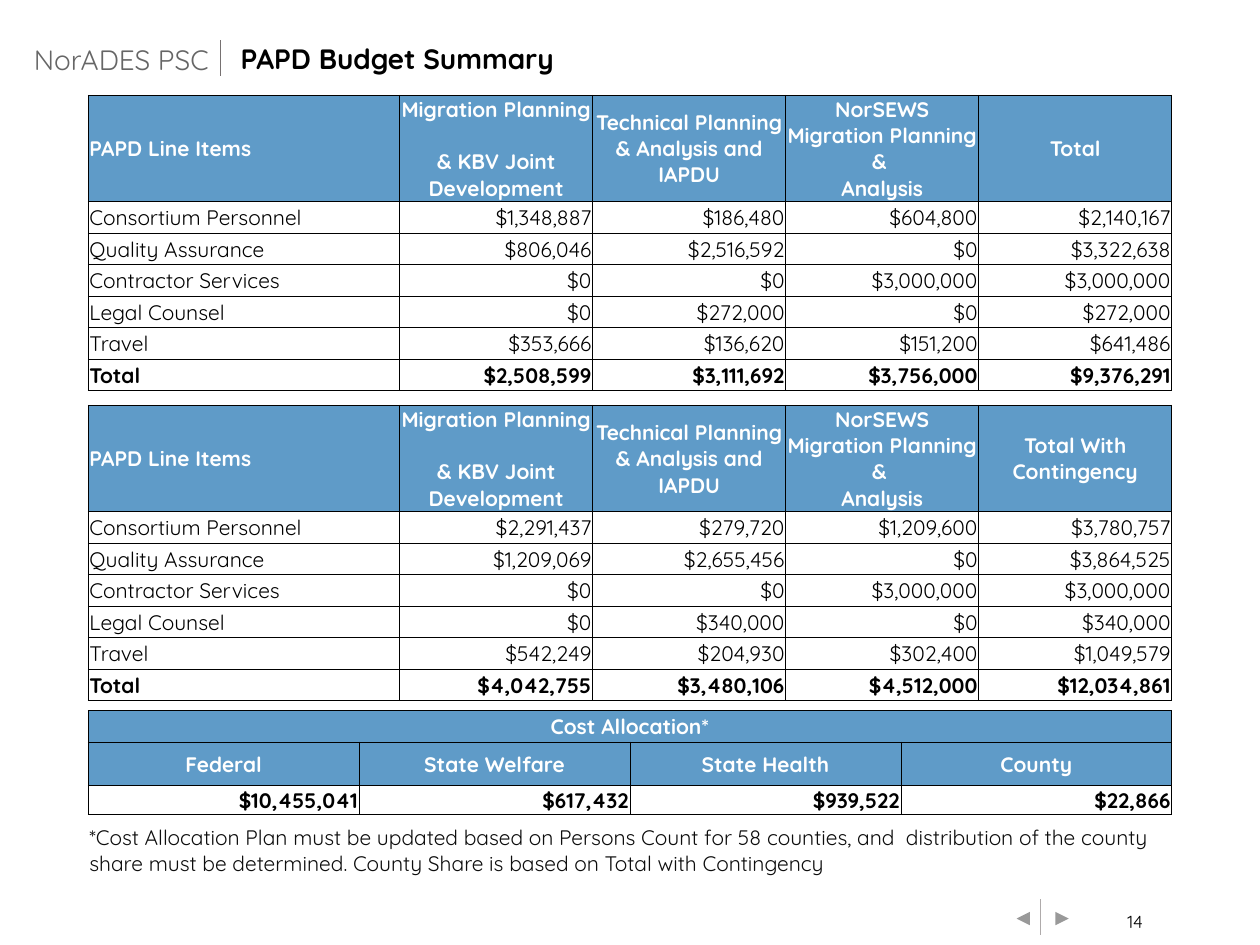
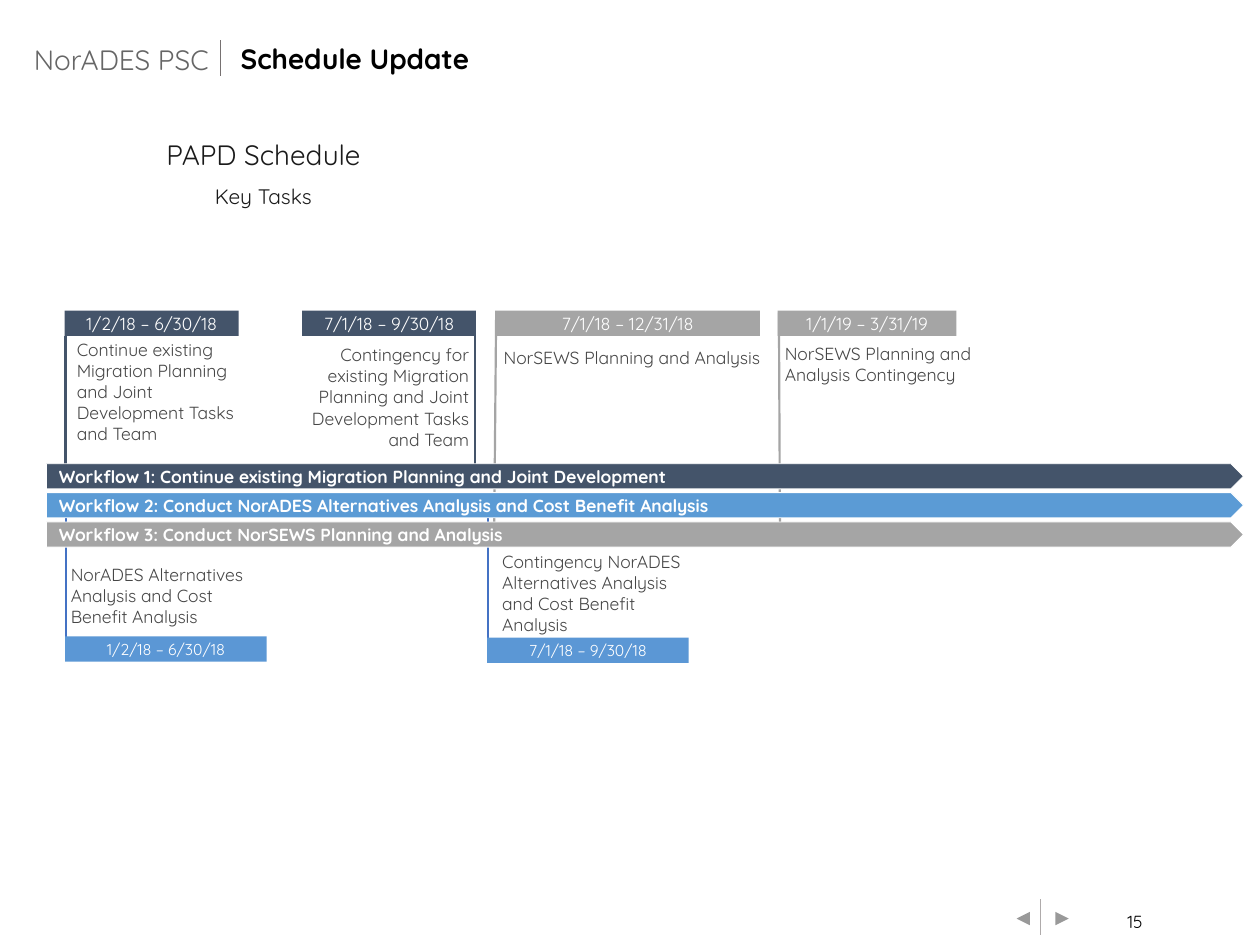
"""Build the budget summary and schedule update slides."""
import copy
from dataclasses import dataclass
from typing import Any, Optional

import lxml.etree
import pptx
import pptx.dml.color
import pptx.enum.shapes
import pptx.enum.text
import pptx.oxml.ns
import pptx.util

Pt = pptx.util.Pt
qn = pptx.oxml.ns.qn
Shape = pptx.enum.shapes.MSO_SHAPE
Align = pptx.enum.text.PP_ALIGN
Anchor = pptx.enum.text.MSO_ANCHOR

FONT = "Quicksand"
WHITE, BLACK, GREY, NAVY = "FFFFFF", "000000", "A5A5A5", "44546A"
HEADER_BLUE, FLOW_BLUE, DATE_BLUE, STEM_BLUE = "5F9BC8", "5B9BD5", "5B97D5", "4472C4"
TASK_GREY = "464646"
BAND_HEIGHT = 14.4
NO_INSETS = (0, 0, 0, 0)
BOX_INSETS = (7.2, 3.6, 7.2, 3.6)
TITLE_INSETS = (0, 3.6, 0, 3.6)


@dataclass
class Area:
    """Left, top, width and height in points."""
    left: float
    top: float
    width: float
    height: float

    def lengths(self) -> tuple:
        """Return the four values as lengths."""
        return Pt(self.left), Pt(self.top), Pt(self.width), Pt(self.height)


@dataclass
class Line:
    """A straight line between two points."""
    x1: float
    y1: float
    x2: float
    y2: float
    color: str
    weight: float = 1.25


@dataclass
class Workflow:
    """A full-width arrow bar."""
    top: float
    color: str
    text: str


@dataclass
class Phase:
    """A dated band with its stem and task description."""
    band: Area
    color: str
    dates: str
    stem: Line
    task_area: Area
    task: str
    date_size: float = 10
    align: Any = Align.LEFT
    anchor: Any = Anchor.TOP


@dataclass
class Cell:
    """Text and look of one table cell."""
    text: str = ""
    align: Any = Align.LEFT
    color: str = BLACK
    bold: bool = False
    fill: Optional[str] = None
    borders: str = "LRTB"


WORKFLOWS = [
    Workflow(265, NAVY, "Workflow 1: Continue existing Migration Planning and Joint Development"),
    Workflow(281.5, FLOW_BLUE, "Workflow 2: Conduct NorADES Alternatives Analysis and Cost Benefit Analysis"),
    Workflow(298.3, GREY, "Workflow 3: Conduct NorSEWS Planning and Analysis"),
]

PHASES = [
    Phase(Area(36.9, 177.6, 99.4, BAND_HEIGHT), NAVY, "1/2/18 – 6/30/18",
          Line(37.5, 192, 37.5, 268, NAVY), Area(43.9, 193.7, 103, 58.3),
          "Continue existing Migration Planning and Joint Development Tasks and Team"),
    Phase(Area(172.6, 177.6, 99.4, BAND_HEIGHT), NAVY, "7/1/18 – 9/30/18",
          Line(271.4, 185, 271.4, 271, NAVY), Area(165.6, 196.8, 102.4, 46.8),
          "Contingency for existing Migration Planning and Joint Development Tasks and Team",
          align=Align.RIGHT),
    Phase(Area(283, 177.6, 151.2, BAND_HEIGHT), GREY, "7/1/18 – 12/31/18",
          Line(283.5, 181.4, 282.4, 303.8, GREY), Area(287.8, 198, 151.2, 39.6),
          "NorSEWS Planning and Analysis"),
    Phase(Area(444.4, 177.6, 102.2, BAND_HEIGHT), GREY, "1/1/19 – 3/31/19",
          Line(445.1, 178.6, 445.7, 301, GREY), Area(448.5, 195.8, 120.2, 51.8),
          "NorSEWS Planning and Analysis Contingency"),
    Phase(Area(37.2, 363.7, 115.2, BAND_HEIGHT), DATE_BLUE, "1/2/18 – 6/30/18",
          Line(37.8, 290.2, 37.8, 376.6, STEM_BLUE), Area(40.5, 320.6, 110.2, 39.6),
          "NorADES Alternatives Analysis and Cost Benefit Analysis", 9, anchor=Anchor.MIDDLE),
    Phase(Area(278.4, 364.4, 115.2, BAND_HEIGHT), DATE_BLUE, "7/1/18 – 9/30/18",
          Line(278.9, 290.9, 278.9, 377.3, STEM_BLUE), Area(287, 319, 110.2, 39.6),
          "Contingency NorADES Alternatives Analysis and Cost Benefit Analysis", 9,
          anchor=Anchor.MIDDLE),
]

LINE_ITEMS = ["Consortium Personnel", "Quality Assurance", "Contractor Services", "Legal Counsel", "Travel"]
BUDGET_HEADERS = ["Migration Planning \v& KBV Joint Development", "Technical Planning & Analysis and IAPDU",
                  "NorSEWS Migration Planning & \vAnalysis"]
BASE_BUDGET = [(1348887, 186480, 604800), (806046, 2516592, 0), (0, 0, 3000000),
               (0, 272000, 0), (353666, 136620, 151200)]
CONTINGENCY_BUDGET = [(2291437, 279720, 1209600), (1209069, 2655456, 0), (0, 0, 3000000),
                      (0, 340000, 0), (542249, 204930, 302400)]
COST_SHARES = {"Federal": 10455041, "State Welfare": 617432, "State Health": 939522, "County": 22866}
FOOTNOTE = ("*Cost Allocation Plan must be updated based on Persons Count for 58 counties, and  distribution "
            "of the county share must be determined. County Share is based on Total with Contingency")


def rgb(color: str) -> Any:
    """Turn a hex string into a colour."""
    return pptx.dml.color.RGBColor.from_string(color)


def write_text(frame: Any, text: str, *, size: float, color: str = BLACK, bold: bool = False,
               align: Any = Align.LEFT) -> None:
    """Write paragraphs split at newlines, with line breaks at vertical tabs."""
    for index, line in enumerate(text.split("\n")):
        para = frame.add_paragraph() if index else frame.paragraphs[0]
        para.text = line
        para.alignment = align
        for span in para.runs:
            span.font.name, span.font.size, span.font.bold = FONT, Pt(size), bold
            span.font.color.rgb = rgb(color)
        for line_break in para._p.findall(qn("a:br")):
            line_break.append(copy.deepcopy(para.runs[0]._r.rPr))


def set_frame(frame: Any, insets: tuple, anchor: Any, wrap: bool = True) -> None:
    """Set the insets, anchor and wrapping of a text frame."""
    frame.margin_left, frame.margin_top, frame.margin_right, frame.margin_bottom = map(Pt, insets)
    frame.vertical_anchor = anchor
    frame.word_wrap = wrap
    frame.auto_size = pptx.enum.text.MSO_AUTO_SIZE.NONE


def add_text(page: Any, area: Area, text: str, *, insets: tuple = NO_INSETS, anchor: Any = Anchor.TOP,
             wrap: bool = True, **text_format: Any) -> Any:
    """Add a text box and return its frame."""
    frame = page.shapes.add_textbox(*area.lengths()).text_frame
    set_frame(frame, insets, anchor, wrap)
    write_text(frame, text, **text_format)
    return frame


def add_block(page: Any, kind: Any, area: Area, fill: str, text: str = "", *,
              outline: Optional[str] = None, **text_format: Any) -> Any:
    """Add a filled preset shape, with text if given."""
    block = page.shapes.add_shape(kind, *area.lengths())
    block.shadow.inherit = False
    block.fill.solid()
    block.fill.fore_color.rgb = rgb(fill)
    if outline:
        block.line.color.rgb = rgb(outline)
        block.line.width = Pt(0.5)
    else:
        block.line.fill.background()
    if text:
        set_frame(block.text_frame, BOX_INSETS, Anchor.MIDDLE)
        write_text(block.text_frame, text, color=WHITE, **text_format)
    return block


def add_line(page: Any, line: Line) -> None:
    """Draw a straight line without shadow."""
    connector = page.shapes.add_connector(pptx.enum.shapes.MSO_CONNECTOR.STRAIGHT,
                                          Pt(line.x1), Pt(line.y1), Pt(line.x2), Pt(line.y2))
    connector.line.color.rgb = rgb(line.color)
    connector.line.width = Pt(line.weight)
    lxml.etree.SubElement(connector._element.spPr, qn("a:effectLst"))


def add_page(deck: Any, title: str, number: int) -> Any:
    """Add a slide with the shared heading and footer."""
    page = deck.slides.add_slide(deck.slide_layouts.get_by_name("Title Only"))
    heading = page.shapes.title
    heading.left, heading.top, heading.width, heading.height = Area(137.5, 21.2, 518.4, 26.6).lengths()
    set_frame(heading.text_frame, TITLE_INSETS, Anchor.MIDDLE)
    write_text(heading.text_frame, title, size=16, bold=True)
    heading.text_frame.paragraphs[0].line_spacing = 0.9
    add_text(page, Area(19.4, 20.5, 172, 26.6), "NorADES PSC", size=16, color="666666",
             insets=TITLE_INSETS, anchor=Anchor.MIDDLE)
    add_line(page, Line(126, 23, 126, 43.2, "767171", 0.5))
    for left, rotation in ((601.9, 0), (579.6, 180)):
        button = add_block(page, Shape.ACTION_BUTTON_FORWARD_OR_NEXT, Area(left, 518.4, 10.1, 13), WHITE)
        button.rotation = rotation
    add_line(page, Line(594.7, 514, 594.7, 534.2, "AFABAB", 0.5))
    add_text(page, Area(635.8, 517.7, 23, 17.3), str(number), size=10, align=Align.RIGHT,
             insets=(5.8, 2.9, 5.8, 2.9), wrap=False)
    return page


def header_cell(text: str, align: Any = Align.CENTER) -> Cell:
    """Describe a white-on-blue header cell."""
    return Cell(text, align, WHITE, True, HEADER_BLUE)


def money_cell(amount: int, bold: bool = False) -> Cell:
    """Describe a right-aligned dollar amount."""
    return Cell(f"${amount:,}", Align.RIGHT, bold=bold)


def draw_cell(target: Any, cell: Cell) -> None:
    """Format a table cell and write its text."""
    target.margin_left = target.margin_right = target.margin_top = Pt(0.7)
    target.margin_bottom = 0
    target.vertical_anchor = Anchor.MIDDLE
    if cell.fill:
        target.fill.solid()
        target.fill.fore_color.rgb = rgb(cell.fill)
    else:
        target.fill.background()
    properties = target._tc.get_or_add_tcPr()
    for index, side in enumerate("LRTB"):
        border = lxml.etree.Element(qn(f"a:ln{side}"), w=str(Pt(0.5)))
        if side in cell.borders:
            paint = lxml.etree.SubElement(border, qn("a:solidFill"))
            lxml.etree.SubElement(paint, qn("a:srgbClr"), val=BLACK)
        else:
            lxml.etree.SubElement(border, qn("a:noFill"))
        properties.insert(index, border)
    if cell.text:
        write_text(target.text_frame, cell.text, size=12, color=cell.color, bold=cell.bold, align=cell.align)
    else:
        lxml.etree.SubElement(target.text_frame.paragraphs[0]._p, qn("a:endParaRPr"), sz="100")


def add_grid(page: Any, left: float, top: float, widths: list, heights: list, rows: list) -> Any:
    """Add a table drawn from rows of cell descriptions."""
    area = Area(left, top, sum(widths), sum(heights))
    table = page.shapes.add_table(len(heights), len(widths), *area.lengths()).table
    table.first_row = table.horz_banding = False
    for column, width in zip(table.columns, widths):
        column.width = Pt(width)
    for row, height, cells in zip(table.rows, heights, rows):
        row.height = Pt(height)
        for target, cell in zip(row.cells, cells):
            draw_cell(target, cell)
    return table


def budget_rows(amounts: list, total_header: str) -> list:
    """Describe one budget block with its row and column totals."""
    rows = [[header_cell("PAPD Line Items", Align.LEFT), *map(header_cell, BUDGET_HEADERS + [total_header])]]
    column_totals = tuple(map(sum, zip(*amounts)))
    for name, values in zip(LINE_ITEMS + ["Total"], amounts + [column_totals]):
        bold = name == "Total"
        rows.append([Cell(name, bold=bold), *(money_cell(value, bold) for value in (*values, sum(values)))])
    return rows


def build_budget(deck: Any) -> None:
    """Build the budget summary slide."""
    page = add_page(deck, "PAPD Budget Summary", 14)
    block_heights = [60.5] + [18] * 6
    rows = [*budget_rows(BASE_BUDGET, "Total"), [Cell(borders="TB")] * 5,
            *budget_rows(CONTINGENCY_BUDGET, "Total With Contingency")]
    add_grid(page, 50.4, 54.4, [178] + [110.3] * 4, block_heights + [8.5] + block_heights, rows)
    shares = [[header_cell("Cost Allocation*")] + [header_cell("")] * 3,
              [header_cell(name) for name in COST_SHARES],
              [money_cell(amount, True) for amount in COST_SHARES.values()],
              [Cell(FOOTNOTE, color="0D0D0D", borders="T")] + [Cell(borders="T")] * 3]
    table = add_grid(page, 50.4, 406, [154.8] * 4, [18, 25, 16.2, 41], shares)
    for row in (0, 3):
        table.cell(row, 0).merge(table.cell(row, 3))


def build_schedule(deck: Any) -> None:
    """Build the schedule update slide."""
    page = add_page(deck, "Schedule Update", 15)
    frame = add_text(page, Area(82.8, 74.9, 135.4, 48.2), "PAPD Schedule\nKey Tasks", size=16, color="1A1A1A",
                     align=Align.CENTER, insets=BOX_INSETS, wrap=False)
    subtitle = frame.paragraphs[1]
    subtitle.line_spacing = 1.5
    subtitle.runs[0].font.size = Pt(12)
    for phase in PHASES:
        add_line(page, phase.stem)
    for flow in WORKFLOWS:
        add_block(page, Shape.PENTAGON, Area(26.6, flow.top, 684, BAND_HEIGHT), flow.color, flow.text,
                  outline=WHITE, size=10, bold=True)
    for phase in PHASES:
        add_block(page, Shape.RECTANGLE, phase.band, phase.color, phase.dates,
                  size=phase.date_size, align=Align.CENTER)
        add_text(page, phase.task_area, phase.task, size=10, color=TASK_GREY,
                 align=phase.align, anchor=phase.anchor)


def main() -> None:
    """Build and save the deck."""
    deck = pptx.Presentation()
    deck.slide_width, deck.slide_height = Pt(720), Pt(540)
    build_budget(deck)
    build_schedule(deck)
    deck.save("out.pptx")


if __name__ == "__main__":
    main()
